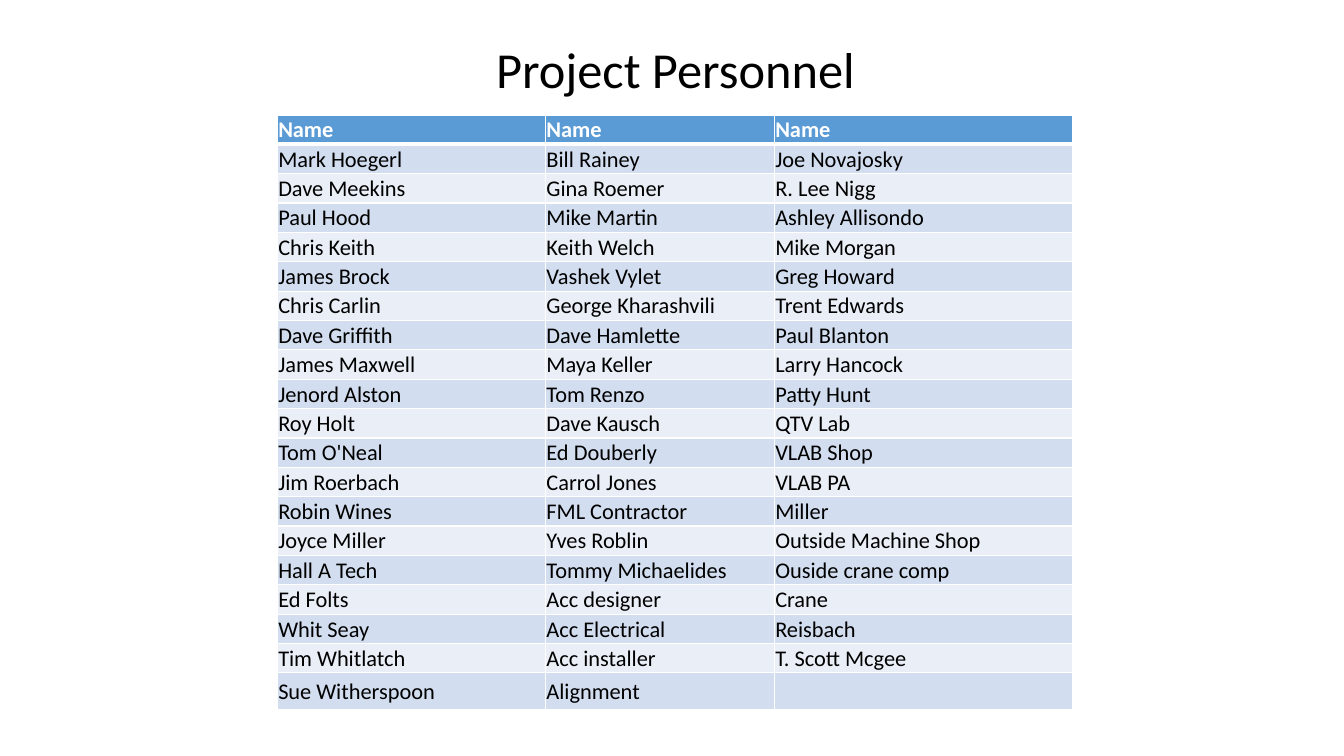
from pptx import Presentation
from pptx.dml.color import RGBColor
from pptx.enum.text import MSO_ANCHOR, PP_ALIGN
from pptx.oxml.ns import qn
from pptx.util import Inches, Pt
from lxml import etree

# Content
TITLE = "Project Personnel"
PERSONNEL = [
    ("Name", "Name", "Name"),
    ("Mark Hoegerl", "Bill Rainey", "Joe Novajosky"),
    ("Dave Meekins", "Gina Roemer", "R. Lee Nigg"),
    ("Paul Hood", "Mike Martin", "Ashley Allisondo"),
    ("Chris Keith", "Keith Welch", "Mike Morgan"),
    ("James Brock", "Vashek Vylet", "Greg Howard"),
    ("Chris Carlin", "George Kharashvili", "Trent Edwards"),
    ("Dave Griffith", "Dave Hamlette", "Paul Blanton"),
    ("James Maxwell", "Maya Keller", "Larry Hancock"),
    ("Jenord Alston", "Tom Renzo", "Patty Hunt"),
    ("Roy Holt", "Dave Kausch", "QTV Lab"),
    ("Tom O'Neal", "Ed Douberly", "VLAB Shop"),
    ("Jim Roerbach", "Carrol Jones", "VLAB PA"),
    ("Robin Wines", "FML Contractor", "Miller"),
    ("Joyce Miller", "Yves Roblin", "Outside Machine Shop"),
    ("Hall A Tech", "Tommy Michaelides", "Ouside crane comp"),
    ("Ed Folts", "Acc designer", "Crane"),
    ("Whit Seay", "Acc Electrical", "Reisbach"),
    ("Tim Whitlatch", "Acc installer", "T. Scott Mcgee"),
    ("Sue Witherspoon", "Alignment", ""),
]

# Look
FONT = "Calibri"
BLACK = RGBColor(0x00, 0x00, 0x00)
WHITE = RGBColor(0xFF, 0xFF, 0xFF)
HEADER_BLUE = RGBColor(0x5B, 0x9B, 0xD5)
BANDS = (RGBColor(0xEA, 0xEF, 0xF7), RGBColor(0xD2, 0xDE, 0xEF))
MIDDLE = MSO_ANCHOR.MIDDLE
CENTER, LEFT = PP_ALIGN.CENTER, PP_ALIGN.LEFT

# Layout in inches
TABLE_LEFT, TABLE_TOP, TABLE_HEIGHT = 2.75, 1.14, 5.9
COLUMN_WIDTHS = (2.66, 2.27, 2.96)
LAST_ROW = 0.36
ROW_HEIGHT = (TABLE_HEIGHT - LAST_ROW) / (len(PERSONNEL) - 1)


def write(frame, text, size, color, bold=False, align=LEFT):
    para = frame.paragraphs[0]
    para.alignment = align
    # Paragraph font also sets the line height of an empty cell
    para.font.size = Pt(size)
    if text:
        span = para.add_run()
        span.text = text
        font = span.font
        font.name, font.size, font.bold = FONT, Pt(size), bold
        font.color.rgb = color
    else:
        end = etree.SubElement(para._p, qn("a:endParaRPr"))
        end.set("sz", str(size * 100))


def add_borders(cell, top, bottom):
    properties = cell._tc.get_or_add_tcPr()
    for side, width in (("L", 1), ("R", 1), ("T", top), ("B", bottom)):
        line = etree.SubElement(properties, qn(f"a:ln{side}"), w=str(Pt(width)))
        fill = etree.SubElement(line, qn("a:solidFill"))
        etree.SubElement(fill, qn("a:srgbClr"), val=str(WHITE))


def add_title(page):
    title = page.shapes.title
    title.left, title.top = Inches(2.85), Inches(0.32)
    title.width, title.height = Inches(7.7), Inches(0.71)
    title.text_frame.word_wrap = True
    title.text_frame.vertical_anchor = MIDDLE
    write(title.text_frame, TITLE, size=36, color=BLACK, align=CENTER)


def add_personnel_table(page):
    table = page.shapes.add_table(
        len(PERSONNEL), len(COLUMN_WIDTHS), Inches(TABLE_LEFT), Inches(TABLE_TOP),
        Inches(sum(COLUMN_WIDTHS)), Inches(TABLE_HEIGHT)).table
    for column, width in zip(table.columns, COLUMN_WIDTHS):
        column.width = Inches(width)
    for index, names in enumerate(PERSONNEL):
        header = index == 0
        last = index == len(PERSONNEL) - 1
        table.rows[index].height = Inches(LAST_ROW if last else ROW_HEIGHT)
        for cell, name in zip(table.rows[index].cells, names):
            cell.margin_left = cell.margin_right = cell.margin_top = Inches(0.01)
            cell.margin_bottom = 0
            cell.vertical_anchor = MIDDLE
            add_borders(cell, top=3 if index == 1 else 1, bottom=3 if header else 1)
            cell.fill.solid()
            cell.fill.fore_color.rgb = HEADER_BLUE if header else BANDS[index % 2]
            write(cell.text_frame, name, size=16,
                  color=WHITE if header else BLACK, bold=header)


def main():
    deck = Presentation()
    deck.slide_width, deck.slide_height = Inches(13.33), Inches(7.5)
    page = deck.slides.add_slide(deck.slide_layouts[5])
    add_title(page)
    add_personnel_table(page)
    deck.save("out.pptx")


if __name__ == "__main__":
    main()
